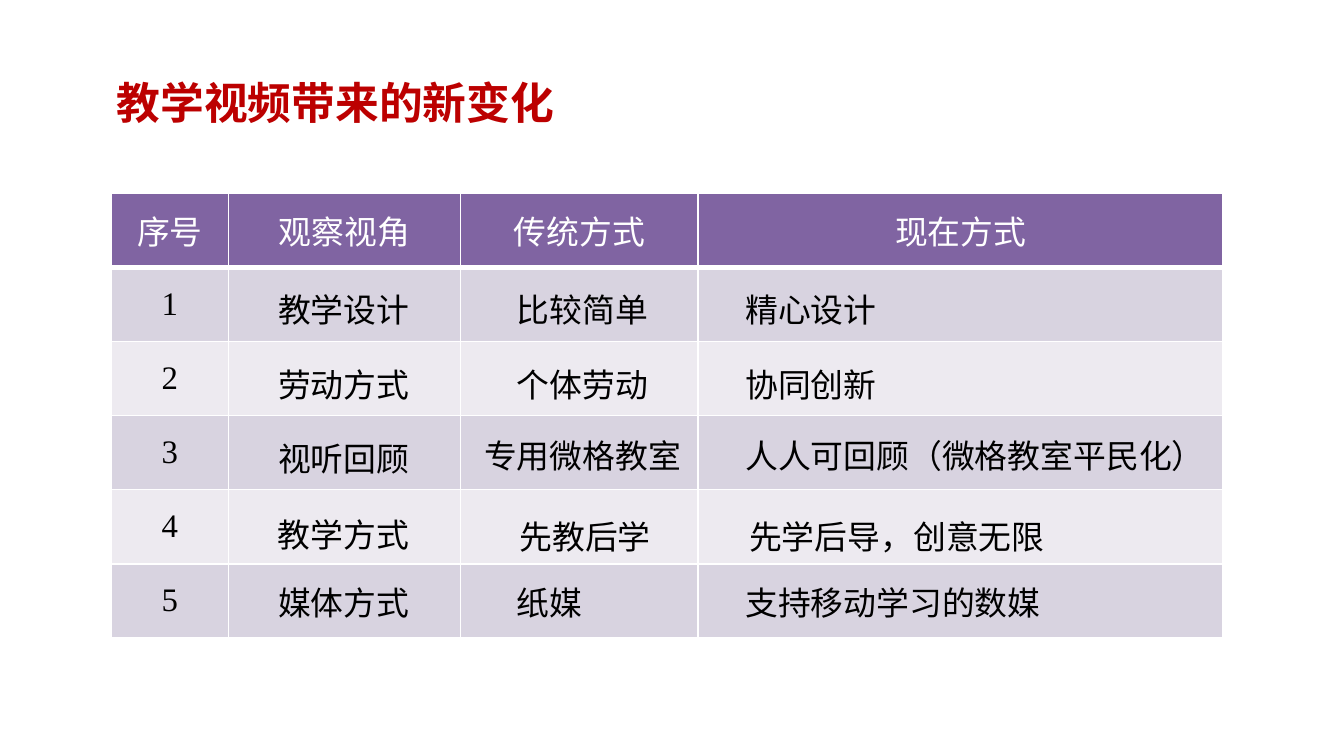
import lxml.etree
import pptx
import pptx.dml.color
import pptx.enum.lang
import pptx.enum.text
import pptx.oxml.ns
import pptx.util

PURPLE, LILAC, PALE = "8064A2", "D8D3E0", "EDEAF0"
WHITE, BLACK, RED = "FFFFFF", "000000", "BC0000"

HEADERS = ["序号", "观察视角", "传统方式", "现在方式"]
COLUMN_WIDTHS = [178, 354, 362, 800]
ROW_HEIGHT = 113
ENTRIES = [
    [("教学设计", 404, 432, 262), ("比较简单", 768, 432, 262),
     ("精心设计", 1116, 432, 248)],
    [("劳动方式", 404, 546, 262), ("个体劳动", 768, 546, 262),
     ("协同创新", 1116, 546, 248)],
    [("视听回顾", 404, 658, 262), ("专用微格教室", 718, 654, 364),
     ("人人可回顾（微格教室平民化）", 1116, 654, 764)],
    [("教学方式", 404, 774, 248), ("先教后学", 772, 778, 262),
     ("先学后导，创意无限", 1122, 778, 506)],
    [("媒体方式", 404, 878, 262), ("纸媒", 768, 878, 144),
     ("支持移动学习的数媒", 1116, 878, 506)],
]


def px(n):
    return pptx.util.Emu(n * 4572)


def rgb(value):
    return pptx.dml.color.RGBColor.from_string(value)


def assign(target, values):
    for name, value in values.items():
        setattr(target, name, value)


class Deck:
    """Holds the shared text style and the current slide."""

    def __init__(self, width, height):
        self.prs = pptx.Presentation()
        assign(self.prs, {"slide_width": px(width), "slide_height": px(height)})
        self.s = self.prs.slides.add_slide(self.prs.slide_layouts[6])
        self.style = {
            "name": "Times New Roman",
            "size": pptx.util.Pt(18),
            "bold": False,
            "language_id": pptx.enum.lang.MSO_LANGUAGE_ID.SIMPLIFIED_CHINESE,
        }

    def run(self, tf, text, color, **changes):
        p = tf.paragraphs[0]
        r = p.add_run()
        r.text = text
        assign(r.font, {**self.style, **changes})
        r.font.color.rgb = rgb(color)
        return p

    def text(self, text, x, y, w, h=80, color=BLACK, **changes):
        sp = self.s.shapes.add_textbox(px(x), px(y), px(w), px(h))
        tf = sp.text_frame
        assign(tf, {"word_wrap": False,
                    "auto_size": pptx.enum.text.MSO_AUTO_SIZE.SHAPE_TO_FIT_TEXT})
        self.run(tf, text, color, **changes)

    def borders(self, cell, bottom):
        tc_pr = cell._tc.get_or_add_tcPr()
        for side, points in (("L", 1), ("R", 1), ("T", 1), ("B", bottom)):
            ln = lxml.etree.SubElement(tc_pr, pptx.oxml.ns.qn("a:ln" + side),
                                       w=str(pptx.util.Pt(points)))
            fill = lxml.etree.SubElement(ln, pptx.oxml.ns.qn("a:solidFill"))
            lxml.etree.SubElement(fill, pptx.oxml.ns.qn("a:srgbClr"), val=WHITE)

    def cell(self, cell, text, fill, color, bottom):
        self.borders(cell, bottom)
        cell.fill.solid()
        cell.fill.fore_color.rgb = rgb(fill)
        cell.vertical_anchor = pptx.enum.text.MSO_ANCHOR.MIDDLE
        if text:
            p = self.run(cell.text_frame, text, color)
            p.alignment = pptx.enum.text.PP_ALIGN.CENTER

    def table(self, rows, x, y, widths, row_height):
        frame = self.s.shapes.add_table(len(rows), len(widths), px(x), px(y),
                                        px(sum(widths)), px(row_height * len(rows)))
        table = frame.table
        for column, width in zip(table.columns, widths):
            column.width = px(width)
        for i, row in enumerate(rows):
            table.rows[i].height = px(row_height)
            band = LILAC if i % 2 else PALE
            look = (band, BLACK, 1) if i else (PURPLE, WHITE, 3)
            for j, text in enumerate(row):
                self.cell(table.cell(i, j), text, *look)


def main():
    deck = Deck(2048, 1126)
    deck.text("教学视频带来的新变化", 158, 106, 730, 100, RED,
              size=pptx.util.Pt(24), bold=True)
    numbered = [[str(n), "", "", ""] for n in range(1, len(ENTRIES) + 1)]
    deck.table([HEADERS] + numbered, 170, 294, COLUMN_WIDTHS, ROW_HEIGHT)
    for row in ENTRIES:
        for entry in row:
            deck.text(*entry)
    deck.prs.save("out.pptx")


if __name__ == "__main__":
    main()
